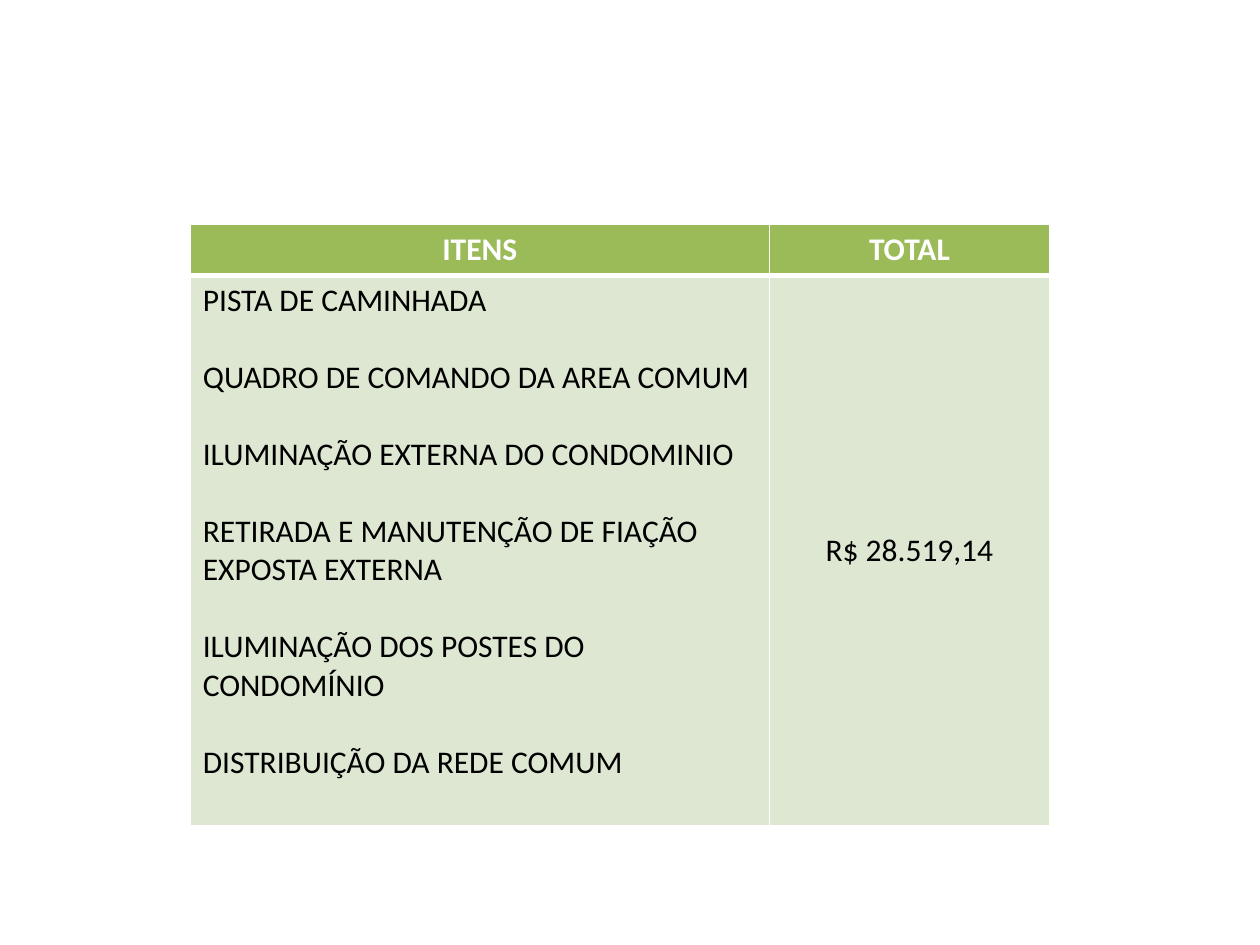
import pptx
import pptx.dml.color
import pptx.enum.text
import pptx.oxml
import pptx.oxml.ns
import pptx.util
from pptx.util import Inches

WHITE = pptx.dml.color.RGBColor(0xFF, 0xFF, 0xFF)
BLACK = pptx.dml.color.RGBColor(0x00, 0x00, 0x00)
GREEN = pptx.dml.color.RGBColor(0x9B, 0xBB, 0x59)
PALE_GREEN = pptx.dml.color.RGBColor(0xDE, 0xE7, 0xD1)

HEADINGS = ["ITENS", "TOTAL"]
ITEMS = [
    "PISTA DE CAMINHADA",
    "QUADRO DE COMANDO DA AREA COMUM",
    "ILUMINAÇÃO EXTERNA DO CONDOMINIO",
    "RETIRADA E MANUTENÇÃO DE FIAÇÃO EXPOSTA EXTERNA",
    "ILUMINAÇÃO DOS POSTES DO CONDOMÍNIO",
    "DISTRIBUIÇÃO DA REDE COMUM",
]
TOTAL = "R$ 28.519,14"
COLUMN_SHARES = [0.674, 0.326]
HEADER_HEIGHT = Inches(0.4)


def set_borders(cell, top, bottom):
    """Draw white cell borders, with top and bottom widths in points."""
    properties = cell._tc.get_or_add_tcPr()
    for side, width in (("L", 1), ("R", 1), ("T", top), ("B", bottom)):
        properties.append(pptx.oxml.parse_xml(
            f'<a:ln{side} {pptx.oxml.ns.nsdecls("a")} w="{pptx.util.Pt(width)}">'
            f'<a:solidFill><a:srgbClr val="{WHITE}"/></a:solidFill></a:ln{side}>'
        ))


def write_cell(cell, lines, fill, color, bold=False, centered=True):
    """Fill a cell and write one paragraph for each line, a blank line's height apart."""
    cell.fill.solid()
    cell.fill.fore_color.rgb = fill
    cell.text = "\n".join(lines)
    for paragraph in cell.text_frame.paragraphs:
        if centered:
            paragraph.alignment = pptx.enum.text.PP_ALIGN.CENTER
        if len(lines) > 1:
            paragraph.space_after = pptx.util.Pt(22)
        paragraph.font.name = "Calibri"
        paragraph.font.size = pptx.util.Pt(18)
        paragraph.font.bold = bold
        paragraph.font.color.rgb = color


def add_budget_table(slide, left, top, width, height):
    """Place the table of works and their total cost in the given box."""
    budget = slide.shapes.add_table(2, 2, left, top, width, height).table
    for column, share in zip(budget.columns, COLUMN_SHARES):
        column.width = int(width * share)
    budget.rows[0].height = HEADER_HEIGHT
    budget.rows[1].height = height - HEADER_HEIGHT

    for index, heading in enumerate(HEADINGS):
        set_borders(budget.cell(0, index), top=1, bottom=3)
        set_borders(budget.cell(1, index), top=3, bottom=1)
        write_cell(budget.cell(0, index), [heading], GREEN, WHITE, bold=True)

    write_cell(budget.cell(1, 0), ITEMS, PALE_GREEN, BLACK, centered=False)
    write_cell(budget.cell(1, 1), [TOTAL], PALE_GREEN, BLACK)
    budget.cell(1, 1).vertical_anchor = pptx.enum.text.MSO_ANCHOR.MIDDLE


def main():
    """Build the one-slide budget presentation."""
    presentation = pptx.Presentation()
    presentation.slide_width = Inches(10)
    presentation.slide_height = Inches(7.5)
    slide = presentation.slides.add_slide(presentation.slide_layouts[6])
    add_budget_table(slide, Inches(1.51), Inches(1.78), Inches(6.82), Inches(4.77))
    presentation.save("out.pptx")


if __name__ == "__main__":
    main()
